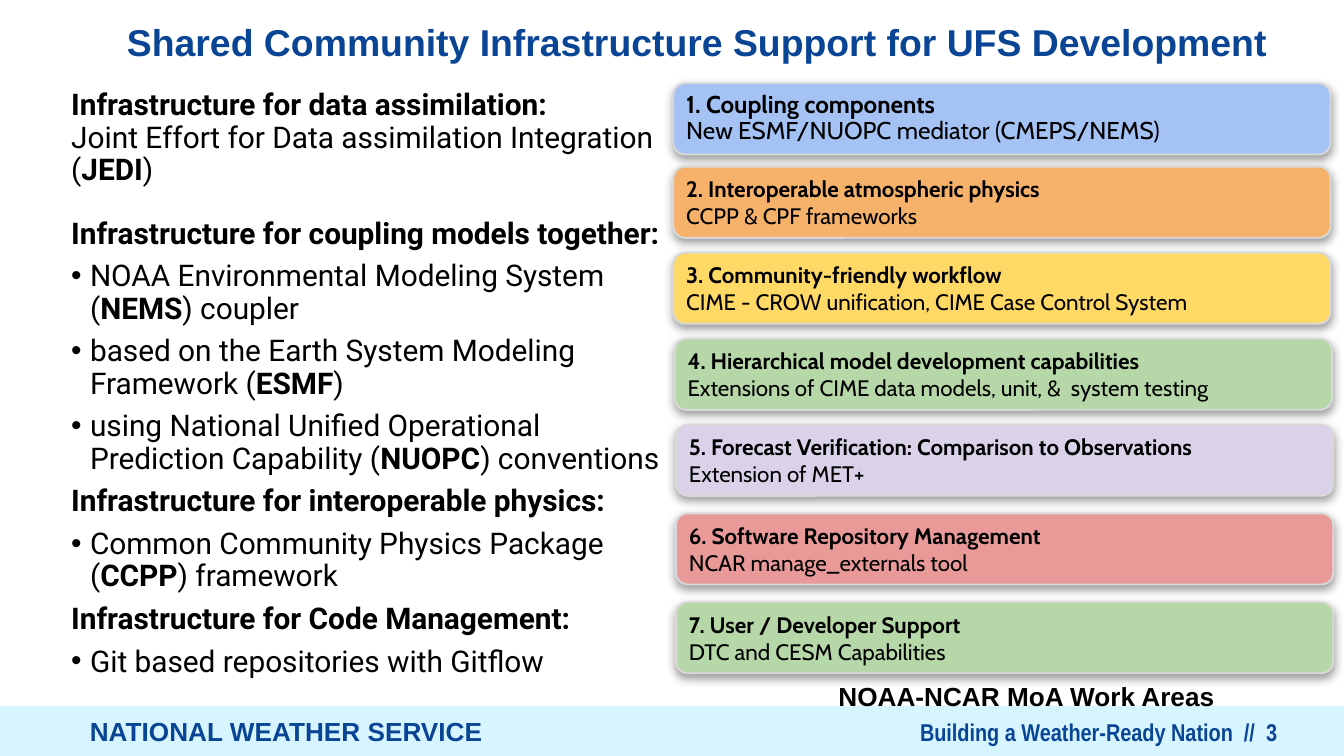
from lxml import etree
from pptx import Presentation
from pptx.dml.color import RGBColor
from pptx.enum import shapes, text
from pptx.oxml.ns import qn
from pptx.util import Inches, Pt

NAVY = RGBColor(0x0A, 0x45, 0x95)
BLACK = RGBColor(0x00, 0x00, 0x00)
PALE_BLUE = RGBColor(0xD6, 0xF5, 0xFF)
GREY = RGBColor(0xD9, 0xD9, 0xD9)
BLUE = RGBColor(0xA4, 0xC2, 0xF4)
ORANGE = RGBColor(0xF6, 0xB2, 0x6B)
YELLOW = RGBColor(0xFF, 0xD9, 0x66)
GREEN = RGBColor(0xB6, 0xD7, 0xA8)
LILAC = RGBColor(0xD9, 0xD2, 0xE9)
RED = RGBColor(0xEA, 0x99, 0x99)


def write(paragraph, content, size=14, font="Arial", color=NAVY, align=text.PP_ALIGN.LEFT,
          spacing=1.0, before=0):
    """Fill a paragraph; *asterisks* mark bold and a newline is a line break."""
    paragraph.alignment = align
    paragraph.line_spacing = spacing
    paragraph.space_before = Pt(before)
    for line_number, line in enumerate(content.split("\n")):
        if line_number:
            paragraph.add_line_break()
        for part_number, part in enumerate(line.split("*")):
            if part:
                run = paragraph.add_run()
                run.text = part
                run.font.size = Pt(size)
                run.font.name = font
                run.font.bold = part_number % 2 == 1
                run.font.color.rgb = color


def set_frame(shape, box, margins, anchor=text.MSO_ANCHOR.TOP):
    """Place a shape and return its text frame with fixed size and margins."""
    shape.left, shape.top, shape.width, shape.height = [Inches(value) for value in box]
    frame = shape.text_frame
    frame.word_wrap = True
    frame.auto_size = text.MSO_AUTO_SIZE.NONE
    frame.vertical_anchor = anchor
    frame.margin_left = frame.margin_right = Inches(margins[0])
    frame.margin_top = frame.margin_bottom = Inches(margins[1])
    return frame


presentation = Presentation()
presentation.slide_width = Inches(10)
presentation.slide_height = Inches(10 * 9 / 16)
slide = presentation.slides.add_slide(presentation.slide_layouts[1])

# Footer band
band = slide.shapes.add_shape(shapes.MSO_SHAPE.RECTANGLE, 0, Inches(5.25), Inches(10), Inches(0.38))
band.shadow.inherit = False
band.fill.solid()
band.fill.fore_color.rgb = PALE_BLUE
band.line.fill.background()

# Title
frame = set_frame(slide.shapes.title, (0.66, 0.09, 9.06, 0.44), (0.1, 0.05))
write(frame.paragraphs[0], "*Shared Community Infrastructure Support for UFS Development*",
      size=20, align=text.PP_ALIGN.CENTER)

# Infrastructure list: text, bulleted, space before
infrastructure = [
    ("*Infrastructure for data assimilation:*\n"
     "Joint Effort for Data assimilation Integration (*JEDI*)", False, 0),
    ("*Infrastructure for coupling models together:*", False, 17),
    ("NOAA Environmental Modeling System (*NEMS*) coupler", True, 5.6),
    ("based on the Earth System Modeling Framework (*ESMF*)", True, 5.6),
    ("using National Unified Operational Prediction Capability (*NUOPC*) conventions", True, 5.6),
    ("*Infrastructure for interoperable physics:*", False, 5.6),
    ("Common Community Physics Package (*CCPP*) framework", True, 5.6),
    ("*Infrastructure for Code Management:*", False, 5.6),
    ("Git based repositories with Gitflow", True, 5.6),
]
frame = set_frame(slide.placeholders[1], (0.46, 0.63, 4.58, 4.59), (0.07, 0.04))
for number, (content, bulleted, before) in enumerate(infrastructure):
    paragraph = frame.add_paragraph() if number else frame.paragraphs[0]
    properties = paragraph._p.get_or_add_pPr()
    indent = Inches(0.14) if bulleted else 0
    properties.set("marL", str(indent))
    properties.set("indent", str(-indent))
    if bulleted:
        etree.SubElement(properties, qn("a:buChar"), char="•")
    else:
        etree.SubElement(properties, qn("a:buNone"))
    write(paragraph, content, size=16, font="Roboto", color=BLACK, spacing=0.9, before=before)

# Work area cards: left, top, fill, size, line spacing, heading, detail
work_areas = [
    (5.01, 0.62, BLUE, 13, 0.9, "1. Coupling components", "New ESMF/NUOPC mediator (CMEPS/NEMS)"),
    (5.01, 1.24, ORANGE, 12, 1.0, "2. Interoperable atmospheric physics", "CCPP & CPF frameworks"),
    (5.01, 1.88, YELLOW, 12, 1.0, "3. Community-friendly workflow",
     "CIME - CROW unification, CIME Case Control System"),
    (5.02, 2.52, GREEN, 12, 1.0, "4. Hierarchical model development capabilities",
     "Extensions of CIME data models, unit, &  system testing"),
    (5.03, 3.16, LILAC, 12, 1.0, "5. Forecast Verification: Comparison to Observations",
     "Extension of MET+"),
    (5.03, 3.82, RED, 12, 1.0, "6. Software Repository Management", "NCAR manage_externals tool"),
    (5.03, 4.48, GREEN, 12, 1.0, "7. User / Developer Support", "DTC and CESM Capabilities"),
]
for left, top, fill, size, spacing, heading, detail in work_areas:
    card = slide.shapes.add_shape(shapes.MSO_SHAPE.ROUNDED_RECTANGLE, 0, 0, 0, 0)
    card.fill.solid()
    card.fill.fore_color.rgb = fill
    card.line.color.rgb = GREY
    card.line.width = Pt(1)
    card.shadow.inherit = False
    effects = card._element.spPr.find(qn("a:effectLst"))
    shadow = etree.SubElement(effects, qn("a:outerShdw"), blurRad=str(Pt(5)), dist=str(Pt(2)),
                              dir="5400000", algn="ctr", rotWithShape="0")
    shadow_color = etree.SubElement(shadow, qn("a:srgbClr"), val=str(BLACK))
    etree.SubElement(shadow_color, qn("a:alpha"), val="40000")
    frame = set_frame(card, (left, top, 4.89, 0.53), (0.07, 0.04), text.MSO_ANCHOR.MIDDLE)
    write(frame.paragraphs[0], f"*{heading}*\n{detail}", size=size, font="Cabin", color=BLACK,
          spacing=spacing)

# Caption and footer texts
labels = [
    ("NOAA-NCAR MoA Work Areas", (6.14, 5.01, 3.03, 0.34), (0.1, 0.05), text.MSO_ANCHOR.MIDDLE,
     dict(color=BLACK)),
    ("NATIONAL WEATHER SERVICE", (0.57, 5.22, 4.35, 0.51), (0.1, 0.1), text.MSO_ANCHOR.TOP, {}),
    ("Building a Weather-Ready Nation  //  3", (1.58, 5.34, 7.92, 0.13), (0, 0), text.MSO_ANCHOR.TOP,
     dict(size=13, font="Arial Narrow", align=text.PP_ALIGN.RIGHT)),
]
for content, box, margins, anchor, style in labels:
    label = slide.shapes.add_textbox(0, 0, 0, 0)
    frame = set_frame(label, box, margins, anchor)
    write(frame.paragraphs[0], f"*{content}*", **style)

presentation.save("out.pptx")
